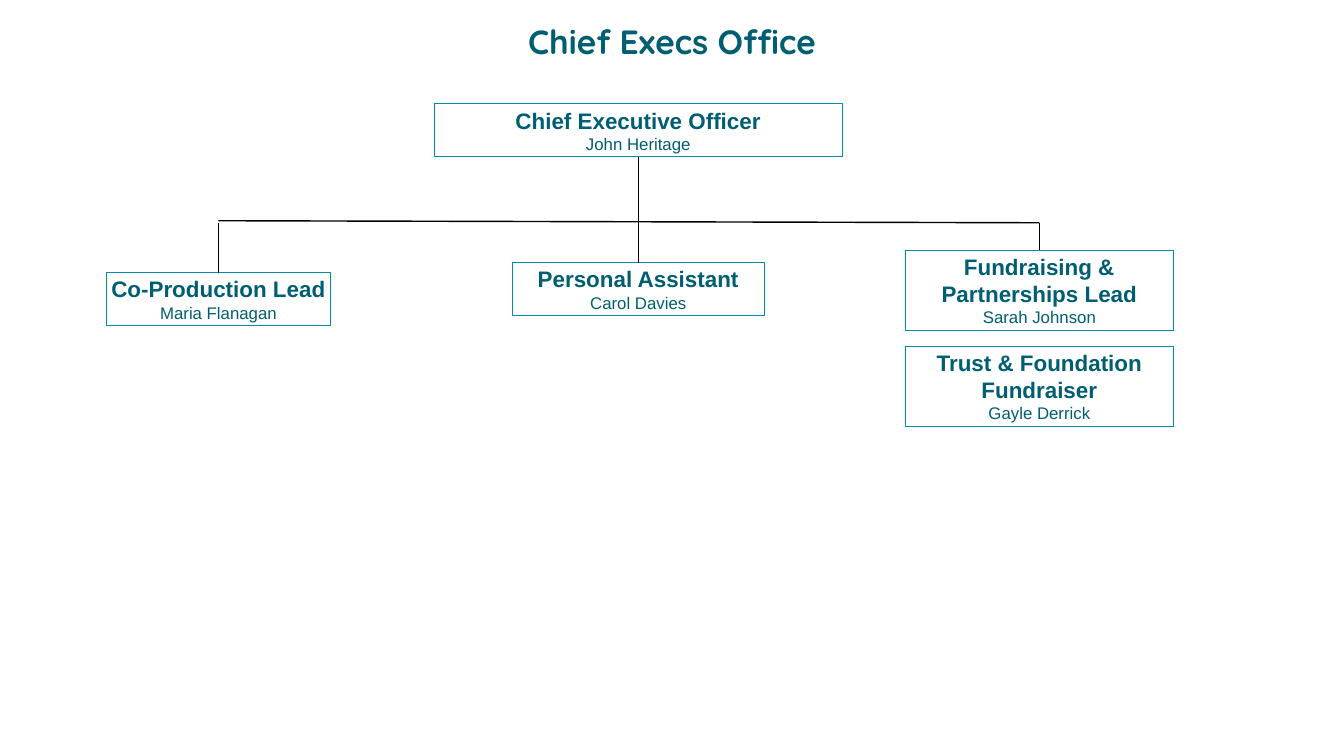
from collections import namedtuple
from dataclasses import dataclass

from lxml import etree
from pptx import Presentation
from pptx import util as u
from pptx.dml.color import RGBColor
from pptx.enum import shapes, text
from pptx.oxml.ns import qn

Box = namedtuple("Box", "left top width height")
Card = namedtuple("Card", "role person box")


@dataclass(frozen=True)
class Theme:
    ink: RGBColor = RGBColor(0x00, 0x5E, 0x72)
    border: RGBColor = RGBColor(0x00, 0x8C, 0xAA)
    connector: RGBColor = RGBColor(0, 0, 0)
    title_font: str = "Quicksand"
    body_font: str = "Arial"
    title_size: u.Pt = u.Pt(48)
    role_size: u.Pt = u.Pt(32)
    person_size: u.Pt = u.Pt(24)
    border_width: u.Pt = u.Pt(1)
    connector_width: u.Pt = u.Pt(2)
    card_inset: u.Inches = u.Inches(0.06)


THEME = Theme()

# Boxes are percentages of the slide or of the enclosing box.
TITLE_AREA = Box(2.74, 3.07, 94.53, 6.67)
CHART_AREA = Box(7.91, 13.73, 79.42, 42.67)
SHORT, TALL = 16.41, 24.84
RIGHT_COLUMN, RIGHT_WIDTH = 74.83, 25.17
BUS_LEFT, BUS_RIGHT = 36.25, 36.88

CHIEF = Card("Chief Executive Officer", "John Heritage", Box(30.69, 0, 38.29, SHORT))
ASSISTANT = Card("Personal Assistant", "Carol Davies", Box(38.01, 49.22, 23.65, SHORT))
CO_PRODUCTION = Card("Co-Production Lead", "Maria Flanagan", Box(0, 52.34, 21.01, SHORT))
FUNDRAISING = Card("Fundraising & Partnerships Lead", "Sarah Johnson",
                   Box(RIGHT_COLUMN, 45.31, RIGHT_WIDTH, TALL))
TRUST = Card("Trust & Foundation Fundraiser", "Gayle Derrick",
             Box(RIGHT_COLUMN, 75.16, RIGHT_WIDTH, TALL))


def within(outer, share):
    return Box(round(outer.left + outer.width * share.left / 100),
               round(outer.top + outer.height * share.top / 100),
               round(outer.width * share.width / 100),
               round(outer.height * share.height / 100))


def style_paragraph(paragraph, font_name, size, bold):
    paragraph.alignment = text.PP_ALIGN.CENTER
    paragraph.font.name = font_name
    paragraph.font.size = size
    paragraph.font.bold = bold
    paragraph.font.color.rgb = THEME.ink


def add_title(slide, box, wording):
    title = slide.shapes.title
    title.left, title.top, title.width, title.height = box
    frame = title.text_frame
    frame.text = wording
    frame.vertical_anchor = text.MSO_ANCHOR.TOP
    frame.auto_size = text.MSO_AUTO_SIZE.NONE
    paragraph = frame.paragraphs[0]
    paragraph.line_spacing = 0.9
    paragraph.space_before = u.Pt(0)
    style_paragraph(paragraph, THEME.title_font, THEME.title_size, True)


def add_card(slide, area, card):
    shape = slide.shapes.add_shape(shapes.MSO_SHAPE.RECTANGLE, *within(area, card.box))
    shape.shadow.inherit = False
    shape.fill.background()
    shape.line.color.rgb = THEME.border
    shape.line.width = THEME.border_width
    frame = shape.text_frame
    frame.word_wrap = True
    frame.auto_size = text.MSO_AUTO_SIZE.SHAPE_TO_FIT_TEXT
    frame.vertical_anchor = text.MSO_ANCHOR.MIDDLE
    frame.margin_left = frame.margin_right = THEME.card_inset
    frame.margin_top = frame.margin_bottom = THEME.card_inset
    frame.text = f"{card.role}\n{card.person}"
    role, person = frame.paragraphs
    style_paragraph(role, THEME.body_font, THEME.role_size, True)
    style_paragraph(person, THEME.body_font, THEME.person_size, False)
    return shape


def add_line(slide, start, end):
    line = slide.shapes.add_connector(shapes.MSO_CONNECTOR.STRAIGHT, *start, *end)
    line.line.color.rgb = THEME.connector
    line.line.width = THEME.connector_width
    etree.SubElement(line._element.spPr, qn("a:effectLst"))
    return line


def top_middle(shape):
    return shape.left + shape.width // 2, shape.top


def add_org_chart(slide, area):
    chief, assistant, co_production, fundraising, _ = [
        add_card(slide, area, card)
        for card in (CHIEF, ASSISTANT, CO_PRODUCTION, FUNDRAISING, TRUST)]

    bus_left, bus_right = [round(area.top + area.height * share / 100)
                           for share in (BUS_LEFT, BUS_RIGHT)]
    left, right = top_middle(co_production)[0], top_middle(fundraising)[0]
    add_line(slide, (left, bus_left), (right, bus_right))

    trunk = add_line(slide, top_middle(chief), top_middle(assistant))
    trunk.begin_connect(chief, 2)
    trunk.end_connect(assistant, 0)

    for lead in (co_production, fundraising):
        drop = add_line(slide, (top_middle(lead)[0], bus_right), top_middle(lead))
        drop.end_connect(lead, 0)


def main():
    presentation = Presentation()
    presentation.slide_width = u.Inches(26.67)
    presentation.slide_height = u.Inches(15)
    page = Box(0, 0, presentation.slide_width, presentation.slide_height)
    slide = presentation.slides.add_slide(presentation.slide_layouts.get_by_name("Title Only"))
    add_title(slide, within(page, TITLE_AREA), "Chief Execs Office")
    add_org_chart(slide, within(page, CHART_AREA))
    presentation.save("out.pptx")


if __name__ == "__main__":
    main()
